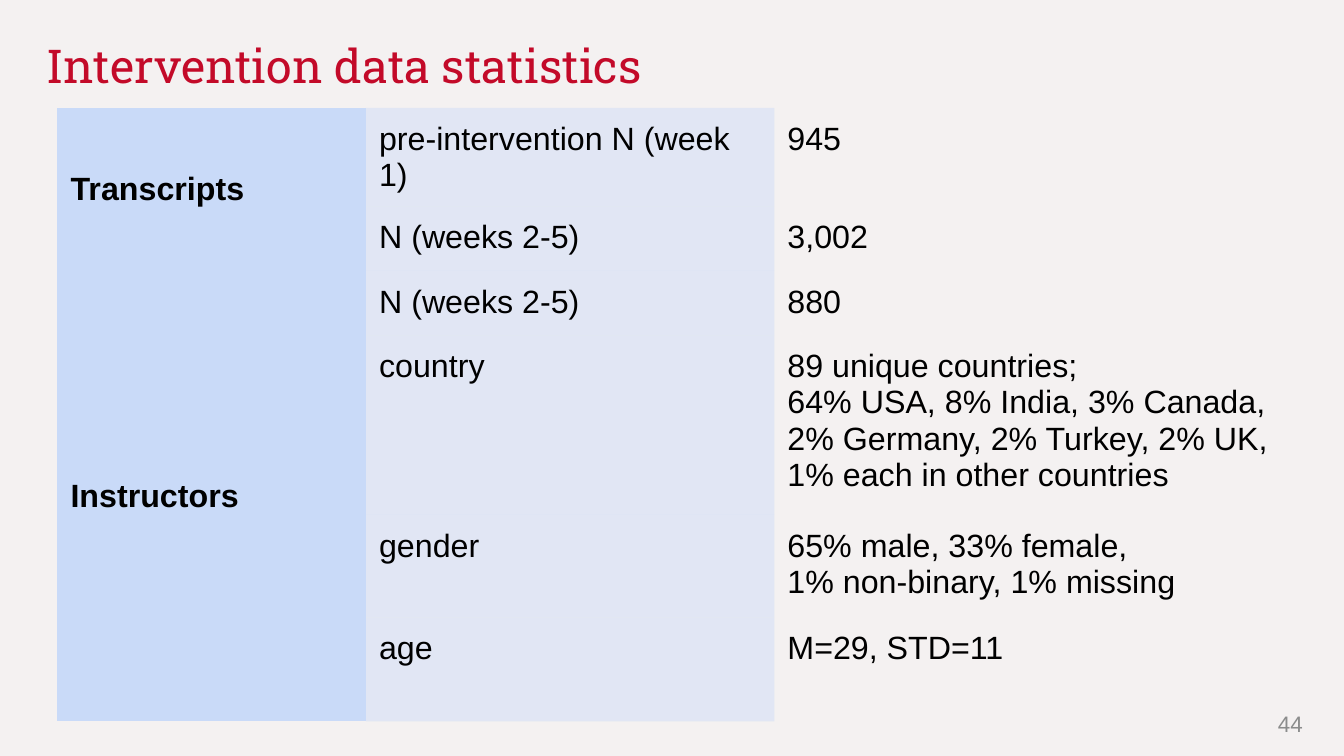
"""Build the slide with the intervention data statistics."""
from lxml.etree import SubElement
from pptx import Presentation
from pptx.dml.color import RGBColor
from pptx.enum.text import MSO_ANCHOR, MSO_AUTO_SIZE, PP_ALIGN
from pptx.oxml.ns import qn
from pptx.util import Inches, Pt

PAPER = RGBColor(0xF4, 0xF1, 0xF1)
CRIMSON = RGBColor(0xC3, 0x0A, 0x29)
BLACK = RGBColor(0x00, 0x00, 0x00)
GRAY = RGBColor(0x8B, 0x8C, 0x8C)
PALE_BLUE = RGBColor(0xC9, 0xDA, 0xF8)
PADDING = Inches(0.13)
PLAIN_TABLE_STYLE = "{2D5ABB26-0587-4C30-8999-92F81FD0307C}"

COLUMN_WIDTHS = (3.06, 4.05, 5.1)
ROW_HEIGHTS = (0.64, 0.64, 0.64, 1.78, 1.02, 1.03)
GROUPS = [
    ("Transcripts", [
        ("pre-intervention N (week 1)", "945"),
        ("N (weeks 2-5)", "3,002"),
    ]),
    ("Instructors", [
        ("N (weeks 2-5)", "880"),
        ("country", "89 unique countries;\n64% USA, 8% India, 3% Canada, "
                    "2% Germany, 2% Turkey, 2% UK, 1% each in other countries"),
        ("gender", "65% male, 33% female,\n1% non-binary, 1% missing"),
        ("age", "M=29, STD=11"),
    ]),
]


def pad(box):
    """Give a text frame or a cell equal margins on all sides."""
    box.margin_left = box.margin_right = PADDING
    box.margin_top = box.margin_bottom = PADDING


def write(frame, text, size, color, face="Arial", bold=False, align=PP_ALIGN.LEFT):
    """Fill a text frame and format all of its runs."""
    frame.text = text
    frame.word_wrap = True
    for paragraph in frame.paragraphs:
        paragraph.alignment = align
        for run in paragraph.runs:
            run.font.name = face
            run.font.size = Pt(size)
            run.font.bold = bold
            run.font.color.rgb = color


def add_title(slide, text):
    """Move and format the title placeholder."""
    title = slide.shapes.title
    title.left, title.top = Inches(0.33), Inches(0.24)
    title.width, title.height = Inches(12.1), Inches(0.83)
    frame = title.text_frame
    write(frame, text, 33.3, CRIMSON, face="Roboto Slab")
    frame.auto_size = MSO_AUTO_SIZE.NONE
    frame.vertical_anchor = MSO_ANCHOR.TOP
    pad(frame)


def fill_cell(cell, text, opacity=0, bold=False):
    """Write a cell over a pale blue fill of the given opacity in percent."""
    write(cell.text_frame, text, 23, BLACK, bold=bold)
    pad(cell)
    if not opacity:
        cell.fill.background()
        return
    cell.fill.solid()
    cell.fill.fore_color.rgb = PALE_BLUE
    if opacity < 100:
        tint = cell._tc.tcPr.find(qn("a:solidFill"))[0]
        SubElement(tint, qn("a:alpha"), val=str(opacity * 1000))


def add_statistics(slide):
    """Add the table with one merged heading cell for each group."""
    table = slide.shapes.add_table(
        len(ROW_HEIGHTS), len(COLUMN_WIDTHS), Inches(0.57), Inches(1.07),
        Inches(sum(COLUMN_WIDTHS)), Inches(sum(ROW_HEIGHTS))).table
    table.first_row = table.horz_banding = False
    table._tbl.tblPr.find(qn("a:tableStyleId")).text = PLAIN_TABLE_STYLE
    for column, width in zip(table.columns, COLUMN_WIDTHS):
        column.width = Inches(width)
    for row, height in zip(table.rows, ROW_HEIGHTS):
        row.height = Inches(height)

    first = 0
    for group, measures in GROUPS:
        heading = table.cell(first, 0)
        heading.merge(table.cell(first + len(measures) - 1, 0))
        fill_cell(heading, group, opacity=100, bold=True)
        heading.vertical_anchor = MSO_ANCHOR.MIDDLE
        for index, (measure, value) in enumerate(measures, first):
            fill_cell(table.cell(index, 1), measure, opacity=44)
            fill_cell(table.cell(index, 2), value)
        first += len(measures)


def add_page_number(slide, number):
    """Add the page number in the lower right corner."""
    frame = slide.shapes.add_textbox(
        Inches(12.25), Inches(6.92), Inches(0.8), Inches(0.57)).text_frame
    pad(frame)
    write(frame, number, 16, GRAY, align=PP_ALIGN.RIGHT)


def main():
    """Create the presentation and save it."""
    presentation = Presentation()
    presentation.slide_width = Inches(13.33)
    presentation.slide_height = Inches(7.5)
    slide = presentation.slides.add_slide(presentation.slide_layouts[5])
    slide.background.fill.solid()
    slide.background.fill.fore_color.rgb = PAPER
    add_title(slide, "Intervention data statistics")
    add_statistics(slide)
    add_page_number(slide, "44")
    presentation.save("out.pptx")


if __name__ == "__main__":
    main()
